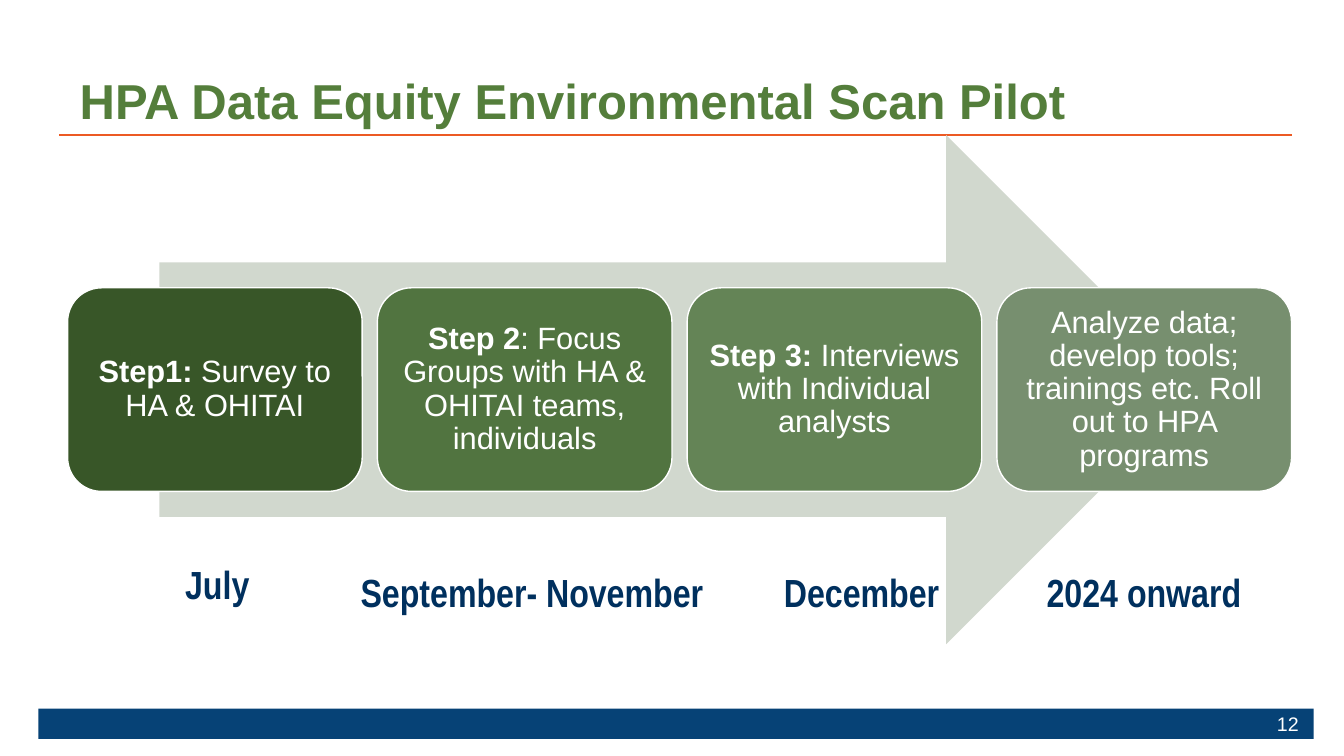
from pptx import Presentation
from pptx import util as u
from pptx.dml.color import RGBColor
from pptx.enum import shapes, text
from pptx.oxml.ns import qn
from lxml import etree

COLORS = {
    "title": "547E3B", "rule": "EC5A24", "footer": "064276",
    "arrow": "D1D8CE", "white": "FFFFFF", "date": "00305E",
}
# Fill, bold lead-in, remaining text
STEPS = [
    ("385628", "Step1:", " Survey to HA & OHITAI"),
    ("517440", "Step 2", ": Focus Groups with HA & OHITAI teams, individuals"),
    ("648456", "Step 3:", " Interviews with Individual analysts"),
    ("778F6F", "", "Analyze data; develop tools; trainings etc. Roll out to HPA programs"),
]
# Label, left, top, width
DATES = [
    ("July", 1.37, 5.51, 1.57),
    ("September- November", 3.41, 5.59, 3.73),
    ("December", 7.21, 5.59, 2.67),
    ("2024 onward", 10.01, 5.59, 2.67),
]


def inches(*lengths):
    return [u.Inches(length) for length in lengths]


def format_run(run, size, color, bold=False, font="Arial"):
    run.font.size = u.Pt(size)
    run.font.name = font
    run.font.bold = bold
    run.font.color.rgb = RGBColor.from_string(color)


def add_filled_shape(slide, preset, box, fill, line=None):
    shape = slide.shapes.add_shape(preset, *inches(*box))
    shape.shadow.inherit = False
    shape.fill.solid()
    shape.fill.fore_color.rgb = RGBColor.from_string(fill)
    if line:
        shape.line.color.rgb = RGBColor.from_string(line)
        shape.line.width = u.Pt(1)
    else:
        shape.line.fill.background()
    return shape


def add_label(slide, box, label, alignment, anchor, **style):
    frame = slide.shapes.add_textbox(*inches(*box)).text_frame
    frame.word_wrap = True
    frame.vertical_anchor = anchor
    frame.text = label
    frame.paragraphs[0].alignment = alignment
    format_run(frame.paragraphs[0].runs[0], **style)


def add_header(slide, left, top, width, height):
    # Title with the rule beneath it
    title = slide.shapes.title
    title.left, title.top, title.width, title.height = inches(left, top, width, height)
    frame = title.text_frame
    frame.text = "HPA Data Equity Environmental Scan Pilot"
    frame.vertical_anchor = text.MSO_ANCHOR.BOTTOM
    frame.auto_size = text.MSO_AUTO_SIZE.NONE
    paragraph = frame.paragraphs[0]
    paragraph.alignment = text.PP_ALIGN.LEFT
    paragraph.line_spacing = 0.9
    format_run(paragraph.runs[0], 35, COLORS["title"], bold=True)

    bottom = top + height
    rule = slide.shapes.add_connector(
        shapes.MSO_CONNECTOR.STRAIGHT,
        *inches(left - 0.1, bottom, left + 12.12, bottom))
    rule.line.color.rgb = RGBColor.from_string(COLORS["rule"])
    rule.line.width = u.Pt(1)
    etree.SubElement(rule._element.spPr, qn("a:effectLst"))


def add_footer(slide, left, top, width, height):
    # Bar with the page number at its right end
    add_filled_shape(slide, shapes.MSO_SHAPE.RECTANGLE,
                     (left, top, width, height), COLORS["footer"])
    add_label(slide, (left + width - 2.54, top + 0.05, 2.49, height - 0.1), "12",
              text.PP_ALIGN.RIGHT, text.MSO_ANCHOR.MIDDLE,
              size=14, color=COLORS["white"])


def add_step(slide, box, fill, lead, detail):
    step = add_filled_shape(slide, shapes.MSO_SHAPE.ROUNDED_RECTANGLE,
                            box, fill, COLORS["white"])
    frame = step.text_frame
    frame.word_wrap = True
    frame.vertical_anchor = text.MSO_ANCHOR.MIDDLE
    frame.margin_left = frame.margin_right = u.Inches(0.09)
    frame.margin_top = frame.margin_bottom = u.Inches(0.09)
    paragraph = frame.paragraphs[0]
    paragraph.alignment = text.PP_ALIGN.CENTER
    paragraph.line_spacing = 0.9
    for words, bold in ((lead, True), (detail, False)):
        if words:
            run = paragraph.add_run()
            run.text = words
            format_run(run, 22, COLORS["white"], bold)


def add_process(slide, left, top, width, height):
    # Arrow behind a row of evenly spaced steps
    add_filled_shape(slide, shapes.MSO_SHAPE.RIGHT_ARROW,
                     (left + 0.91, top, 10.33, height), COLORS["arrow"])
    gap, step_height = 0.15, 2.02
    step_width = (width - gap * (len(STEPS) - 1)) / len(STEPS)
    step_top = top + (height - step_height) / 2
    for index, step in enumerate(STEPS):
        step_left = left + index * (step_width + gap)
        add_step(slide, (step_left, step_top, step_width, step_height), *step)


def add_dates(slide):
    for label, left, top, width in DATES:
        add_label(slide, (left, top, width, 0.57), label,
                  text.PP_ALIGN.CENTER, text.MSO_ANCHOR.TOP,
                  size=28, color=COLORS["date"], bold=True, font="Arial Narrow")


def main():
    presentation = Presentation()
    presentation.slide_width, presentation.slide_height = inches(13.33, 7.5)
    slide = presentation.slides.add_slide(presentation.slide_layouts[5])
    add_footer(slide, 0.38, 7.03, 12.65, 0.3)
    add_header(slide, 0.69, 0.44, 10.94, 0.9)
    add_process(slide, 0.67, 1.34, 12.14, 5.05)
    add_dates(slide)
    presentation.save("out.pptx")


if __name__ == "__main__":
    main()
